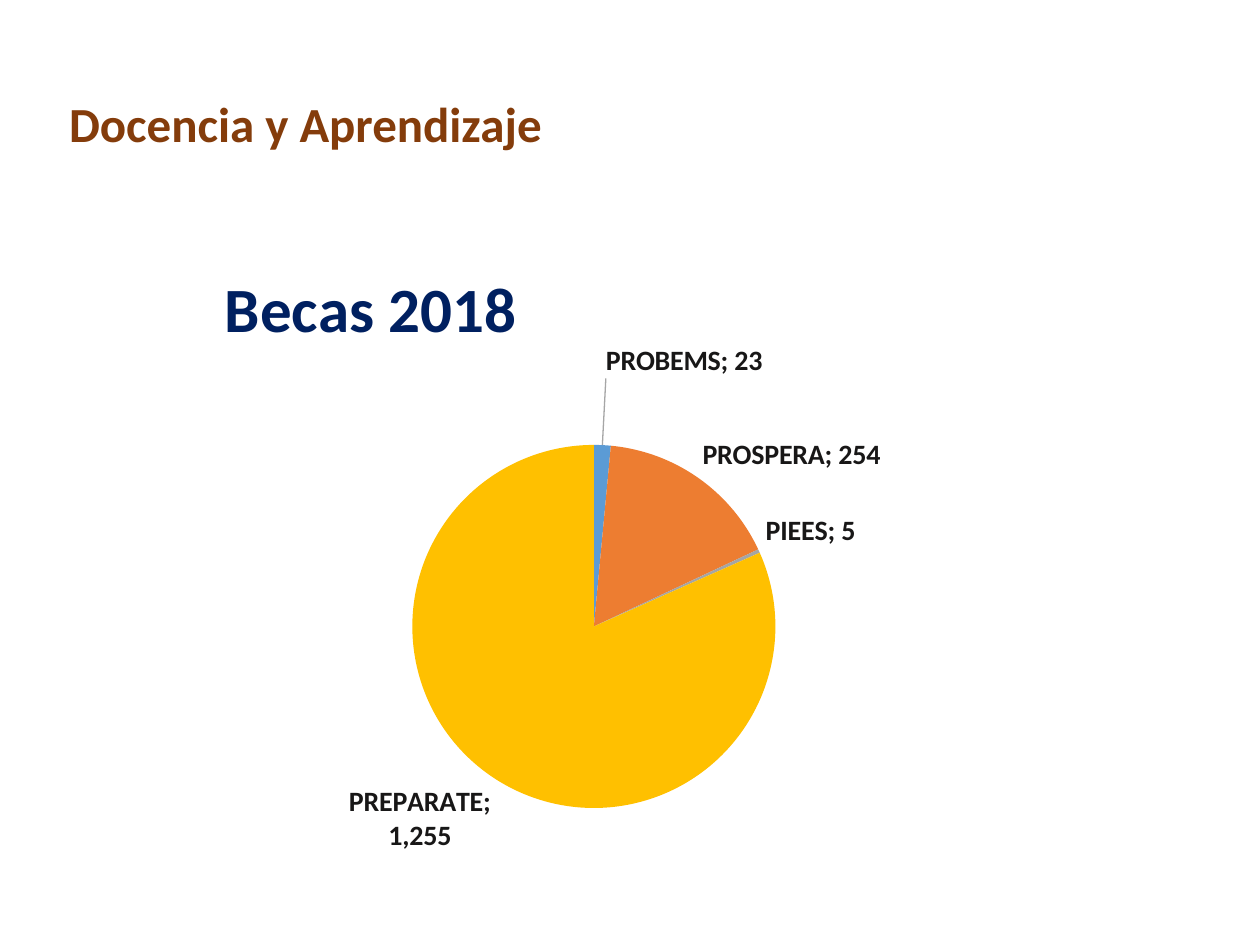
from lxml import etree
from pptx import Presentation
from pptx.chart.data import CategoryChartData
from pptx.dml.color import RGBColor
from pptx.enum.chart import XL_CHART_TYPE, XL_LABEL_POSITION
from pptx.oxml import parse_xml
from pptx.oxml.ns import nsdecls, qn
from pptx.util import Inches, Pt

FONT = "Calibri"
GRANTS = [
    ("PROBEMS", 23, "5B9BD5"),
    ("PROSPERA", 254, "ED7D31"),
    ("PIEES", 5, "A5A5A5"),
    ("PREPARATE", 1255, "FFC000"),
]


def rgb(color):
    return RGBColor.from_string(color)


def set_font(font, size, color, bold=True):
    for name, value in {"name": FONT, "size": Pt(size), "bold": bold}.items():
        setattr(font, name, value)
    font.color.rgb = rgb(color)


def set_layout(parent, index, target=None, **fractions):
    """Give a chart element a manual layout in fractions of the chart."""
    for old in parent.findall(qn("c:layout")):
        parent.remove(old)
    layout = etree.Element(qn("c:layout"))
    manual = etree.SubElement(layout, qn("c:manualLayout"))
    values = {}
    if target:
        values["layoutTarget"] = target
    if target or parent.tag == qn("c:title"):
        values.update(xMode="edge", yMode="edge")
    values.update(fractions)
    for name, value in values.items():
        etree.SubElement(manual, qn(f"c:{name}")).set("val", str(value))
    parent.insert(index, layout)


def add_heading(slide, x, y, w, h):
    tf = slide.shapes.add_textbox(x, y, w, h).text_frame
    tf.word_wrap = True
    r = tf.paragraphs[0].add_run()
    r.text = "Docencia y Aprendizaje"
    set_font(r.font, 28, "843C0B")


def add_labels(series):
    labels = series.data_labels
    formats = {
        "show_value": True,
        "show_category_name": True,
        "number_format": "#,##0",
        "number_format_is_linked": False,
        "position": XL_LABEL_POSITION.OUTSIDE_END,
    }
    for name, value in formats.items():
        setattr(labels, name, value)
    set_font(labels.font, 16, "181717")

    # The first label stands away from its slice, on a leader line
    first = series.points[0].data_label
    set_font(first.font, 16, "181717")
    first.position = XL_LABEL_POSITION.OUTSIDE_END
    group = series._element.find(qn("c:dLbls"))
    single = group.find(qn("c:dLbl"))
    single.find(qn("c:showCatName")).set("val", "1")
    set_layout(single, 1, x=0.09, y=-0.09)

    for old in group.findall(qn("c:showLeaderLines")):
        group.remove(old)
    for element in (single, group):
        separator = etree.Element(qn("c:separator"))
        separator.text = "; "
        element.find(qn("c:showBubbleSize")).addnext(separator)
    etree.SubElement(group, qn("c:showLeaderLines")).set("val", "1")
    group.append(parse_xml(
        f'<c:leaderLines {nsdecls("c", "a")}><c:spPr><a:ln w="9525"><a:solidFill>'
        '<a:srgbClr val="A6A6A6"/></a:solidFill></a:ln></c:spPr></c:leaderLines>'))


def add_grants_pie(slide, x, y, w, h):
    names, values, colors = zip(*GRANTS)
    data = CategoryChartData(number_format="#,##0")
    data.categories = names
    data.add_series("Series 1", values)
    chart = slide.shapes.add_chart(XL_CHART_TYPE.PIE, x, y, w, h, data).chart
    set_font(chart.font, 10, "000000", bold=False)
    chart.has_legend = False

    chart.has_title = True
    r = chart.chart_title.text_frame.paragraphs[0].add_run()
    r.text = "Becas 2018"
    set_font(r.font, 36, "002060")
    set_layout(chart.chart_title._element, 1, x=0.07, y=0.05)

    plot = chart.plots[0]
    plot.vary_by_categories = True
    set_layout(plot._element.getparent(), 0, target="inner",
               x=0.09, y=0.34, w=0.8, h=0.55)
    series = plot.series[0]
    for i, color in enumerate(colors):
        fill = series.points[i].format.fill
        fill.solid()
        fill.fore_color.rgb = rgb(color)
    add_labels(series)


def main():
    prs = Presentation()
    prs.slide_width, prs.slide_height = Inches(10), Inches(7.5)
    slide = prs.slides.add_slide(prs.slide_layouts[6])
    add_heading(slide, Inches(0.45), Inches(0.69), Inches(5.96), Inches(0.57))
    add_grants_pie(slide, Inches(1.19), Inches(1.75), Inches(7.19), Inches(5.24))
    prs.save("out.pptx")


if __name__ == "__main__":
    main()
